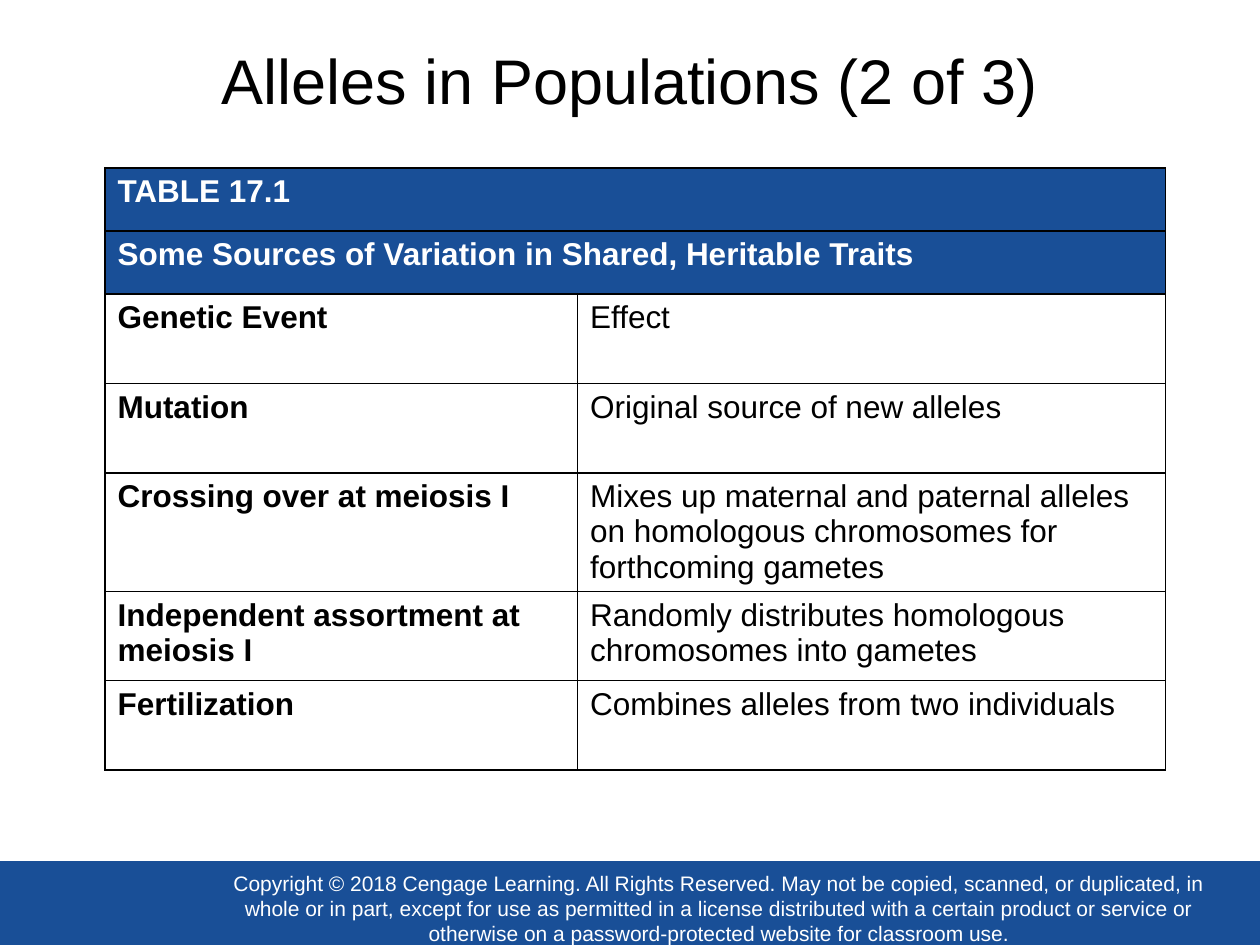
from lxml.etree import SubElement
from pptx import Presentation
from pptx.dml.color import RGBColor
from pptx.enum.shapes import MSO_SHAPE as Preset
from pptx.enum.text import MSO_ANCHOR as Anchor, PP_ALIGN as Align
from pptx.oxml.ns import qn
from pptx.util import Pt

BLUE = RGBColor(0x19, 0x4F, 0x97)
WHITE = RGBColor(0xFF, 0xFF, 0xFF)
BLACK = RGBColor(0x00, 0x00, 0x00)
FONT = "Arial"

TITLE = "Alleles in Populations (2 of 3)"
HEADING_ROWS = [
    ["TABLE 17.1"],
    ["Some Sources of Variation in Shared, Heritable Traits"],
]
EVENT_ROWS = [
    ["Genetic Event", "Effect"],
    ["Mutation", "Original source of new alleles"],
    ["Crossing over at meiosis I",
     "Mixes up maternal and paternal alleles on homologous chromosomes "
     "for forthcoming gametes"],
    ["Independent assortment at meiosis I",
     "Randomly distributes homologous chromosomes into gametes"],
    ["Fertilization", "Combines alleles from two individuals"],
]
COPYRIGHT = (
    "Copyright © 2018 Cengage Learning. All Rights Reserved. May not be "
    "copied, scanned, or duplicated, in whole or in part, except for use as "
    "permitted in a license distributed with a certain product or service or "
    "otherwise on a password-protected website for classroom use."
)


def add_text(paragraph, text, size, color, bold=False):
    """Add one formatted run to a paragraph."""
    run = paragraph.add_run()
    run.text = text
    run.font.name = FONT
    run.font.size = Pt(size)
    run.font.bold = bold
    run.font.color.rgb = color


def add_borders(cell, color, width):
    """Draw a solid line on all four sides of a cell."""
    properties = cell._tc.get_or_add_tcPr()
    for side in ("lnL", "lnR", "lnT", "lnB"):
        line = SubElement(properties, qn(f"a:{side}"), w=str(Pt(width)))
        fill = SubElement(line, qn("a:solidFill"))
        SubElement(fill, qn("a:srgbClr"), val=str(color))


def add_bar(slide, left, top, width, height):
    """Add a plain blue rectangle and return it."""
    bar = slide.shapes.add_shape(
        Preset.RECTANGLE, Pt(left), Pt(top), Pt(width), Pt(height))
    bar.shadow.inherit = False
    bar.fill.solid()
    bar.fill.fore_color.rgb = BLUE
    bar.line.fill.background()
    return bar


def add_footer(slide, left, top, width, height):
    """Place the blue footer band and its copyright notice."""
    add_bar(slide, left, top, width, height)
    notice = add_bar(slide, left + 120, top + 6, width - 138, height - 6)
    frame = notice.text_frame
    frame.word_wrap = True
    frame.vertical_anchor = Anchor.MIDDLE
    frame.margin_left = frame.margin_right = 0
    frame.margin_top = frame.margin_bottom = 0
    paragraph = frame.paragraphs[0]
    paragraph.alignment = Align.CENTER
    add_text(paragraph, COPYRIGHT, 12, WHITE)


def set_title(slide, left, top, width, height):
    """Move and format the title placeholder."""
    title = slide.shapes.title
    title.left, title.top = Pt(left), Pt(top)
    title.width, title.height = Pt(width), Pt(height)
    title.text_frame.vertical_anchor = Anchor.MIDDLE
    paragraph = title.text_frame.paragraphs[0]
    paragraph.alignment = Align.CENTER
    add_text(paragraph, TITLE, 36, BLACK)


def add_grid(slide, left, top, column_widths, row_height, rows,
             color, fill_color=None):
    """Place a bordered table whose first column is bold."""
    table = slide.shapes.add_table(
        len(rows), len(column_widths), Pt(left), Pt(top),
        Pt(sum(column_widths)), Pt(row_height * len(rows))).table
    table.first_row = table.horz_banding = False
    for column, width in zip(table.columns, column_widths):
        column.width = Pt(width)
    for row, texts in zip(table.rows, rows):
        row.height = Pt(row_height)
        for index, (cell, text) in enumerate(zip(row.cells, texts)):
            add_borders(cell, BLACK, 1)
            if fill_color is None:
                cell.fill.background()
            else:
                cell.fill.solid()
                cell.fill.fore_color.rgb = fill_color
            add_text(cell.text_frame.paragraphs[0], text, 18, color,
                     bold=index == 0)


def main():
    """Build the slide and save it."""
    presentation = Presentation()
    presentation.slide_width, presentation.slide_height = Pt(720), Pt(540)
    slide = presentation.slides.add_slide(presentation.slide_layouts[5])
    slide.background.fill.solid()
    slide.background.fill.fore_color.rgb = WHITE
    add_footer(slide, 0, 492, 720, 48)
    set_title(slide, 44, 6, 632, 79)
    add_grid(slide, 60, 96, [606], 36, HEADING_ROWS, WHITE, BLUE)
    add_grid(slide, 60, 168, [270, 336], 51.1, EVENT_ROWS, BLACK)
    presentation.save("out.pptx")


if __name__ == "__main__":
    main()
